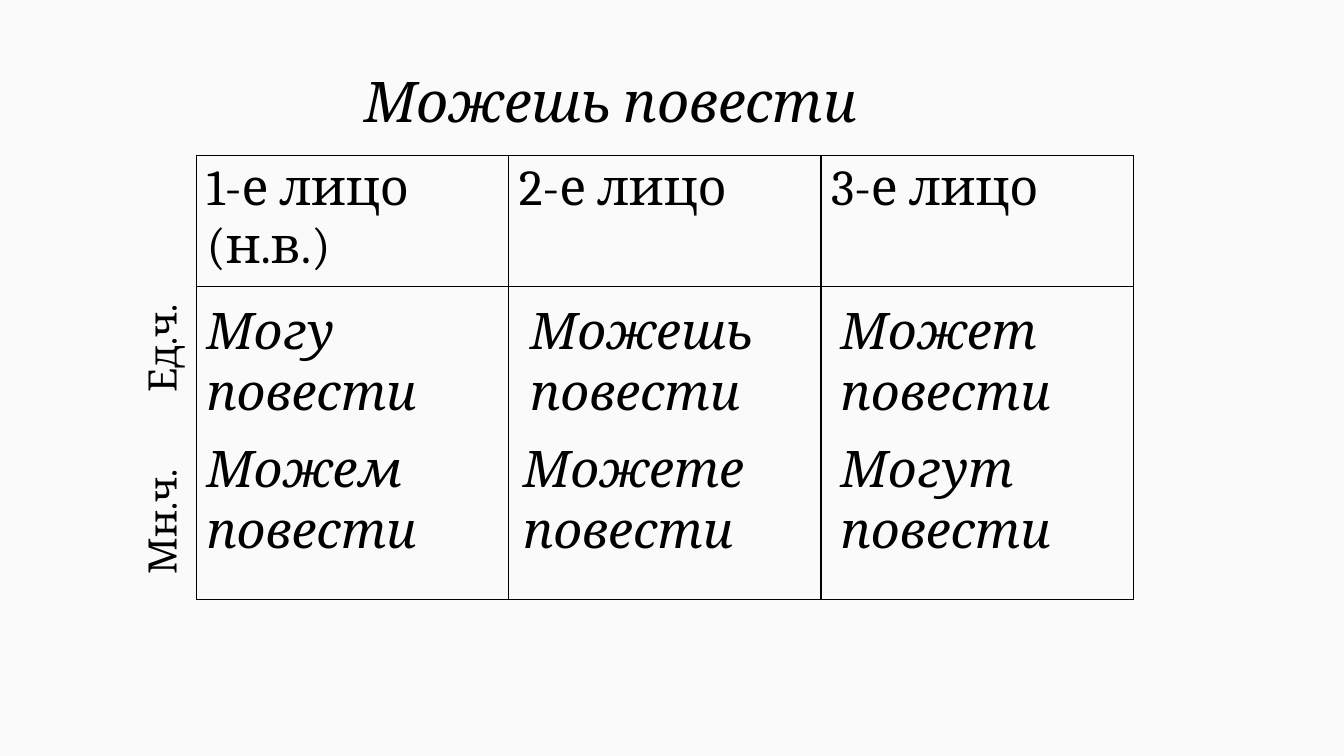
from lxml.etree import SubElement
from pptx import Presentation
from pptx.dml.color import RGBColor
from pptx.enum.text import MSO_ANCHOR as Anchor, MSO_AUTO_SIZE as AutoSize, PP_ALIGN as Align
from pptx.oxml.ns import qn
from pptx.util import Inches, Pt

BLACK = RGBColor(0x00, 0x00, 0x00)
PAPER = RGBColor(0xFA, 0xFA, 0xFA)


def write(tf, text, size=36, italic=False, align=Align.LEFT):
    p = tf.paragraphs[0]
    p.alignment = align
    r = p.add_run()
    r.text = text
    font = r.font
    font.name, font.size = "Cambria", Pt(size)
    font.bold, font.italic = False, italic
    font.color.rgb = BLACK


class VerbSlide:
    def __init__(self, prs):
        self.s = prs.slides.add_slide(prs.slide_layouts[5])
        self.s.background.fill.solid()
        self.s.background.fill.fore_color.rgb = PAPER

    def title(self, text, left, top, width, height):
        sp = self.s.shapes.title
        sp.left, sp.top = Inches(left), Inches(top)
        sp.width, sp.height = Inches(width), Inches(height)
        tf = sp.text_frame
        tf.auto_size, tf.vertical_anchor = AutoSize.NONE, Anchor.TOP
        write(tf, text, size=40, italic=True, align=Align.CENTER)

    def text(self, text, left, top, width, height, rotation=0, **style):
        sp = self.s.shapes.add_textbox(Inches(left), Inches(top), Inches(width), Inches(height))
        sp.rotation = rotation
        sp.text_frame.word_wrap = True
        write(sp.text_frame, text, **style)

    def border(self, cell):
        tcPr = cell._tc.get_or_add_tcPr()
        for i, side in enumerate(("a:lnL", "a:lnR", "a:lnT", "a:lnB")):
            ln = tcPr.makeelement(qn(side), {"w": str(Pt(1))})
            fill = SubElement(ln, qn("a:solidFill"))
            SubElement(fill, qn("a:srgbClr"), val=str(BLACK))
            tcPr.insert(i, ln)

    def table(self, headers, left, top, width, row_heights):
        shape = self.s.shapes.add_table(len(row_heights), len(headers), Inches(left), Inches(top),
                                        Inches(width), Inches(sum(row_heights)))
        table = shape.table
        table.first_row = table.horz_banding = False
        for row, height in zip(table.rows, row_heights):
            row.height = Inches(height)
        for cell in table.iter_cells():
            cell.fill.background()
            self.border(cell)
        for col, header in enumerate(headers):
            write(table.cell(0, col).text_frame, header)


def main():
    prs = Presentation()
    prs.slide_width, prs.slide_height = Inches(13.33), Inches(7.5)
    slide = VerbSlide(prs)

    # Title and table of persons
    slide.title("Можешь повести", 2.38, 0.61, 7.35, 0.77)
    slide.table(["1-е лицо (н.в.)", "2-е лицо", "3-е лицо"], 1.95, 1.54, 9.29, [1.3, 3.11])

    # Verb forms: singular row, then plural row
    forms = [
        (2.92, [(1.95, "Могу"), (5.16, "Можешь"), (8.24, "Может")]),
        (4.29, [(1.95, "Можем"), (5.09, "Можете"), (8.24, "Могут")]),
    ]
    for top, row in forms:
        for left, verb in row:
            slide.text(f"{verb} повести", left, top, 3.01, 1.31, italic=True)

    # Number labels beside the rows
    for label, top in (("Ед.ч.", 3.17), ("Мн.ч.", 4.89)):
        slide.text(label, 0.9, top, 1.4, 0.57, rotation=270, size=28, align=Align.CENTER)

    prs.save("out.pptx")


if __name__ == "__main__":
    main()
